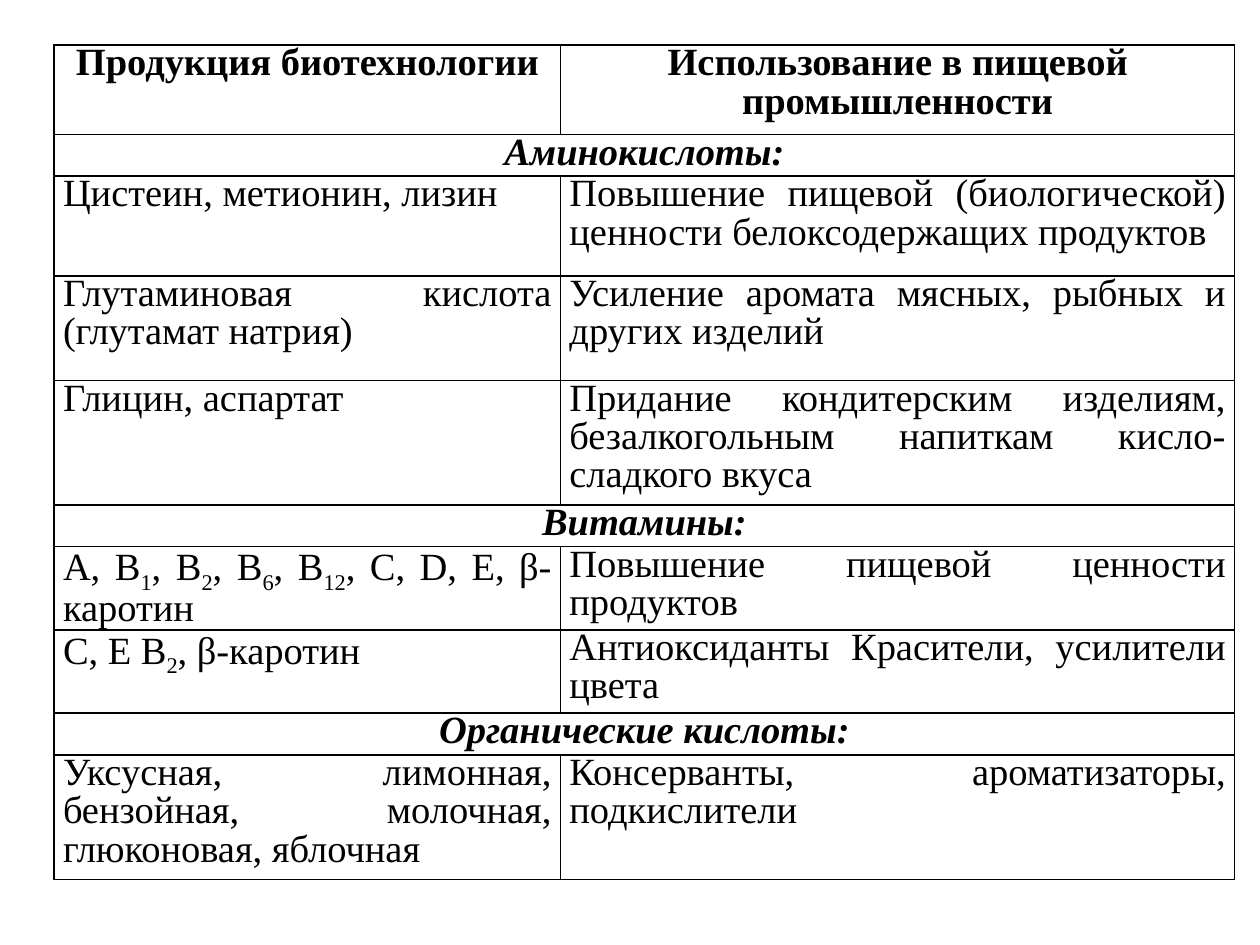
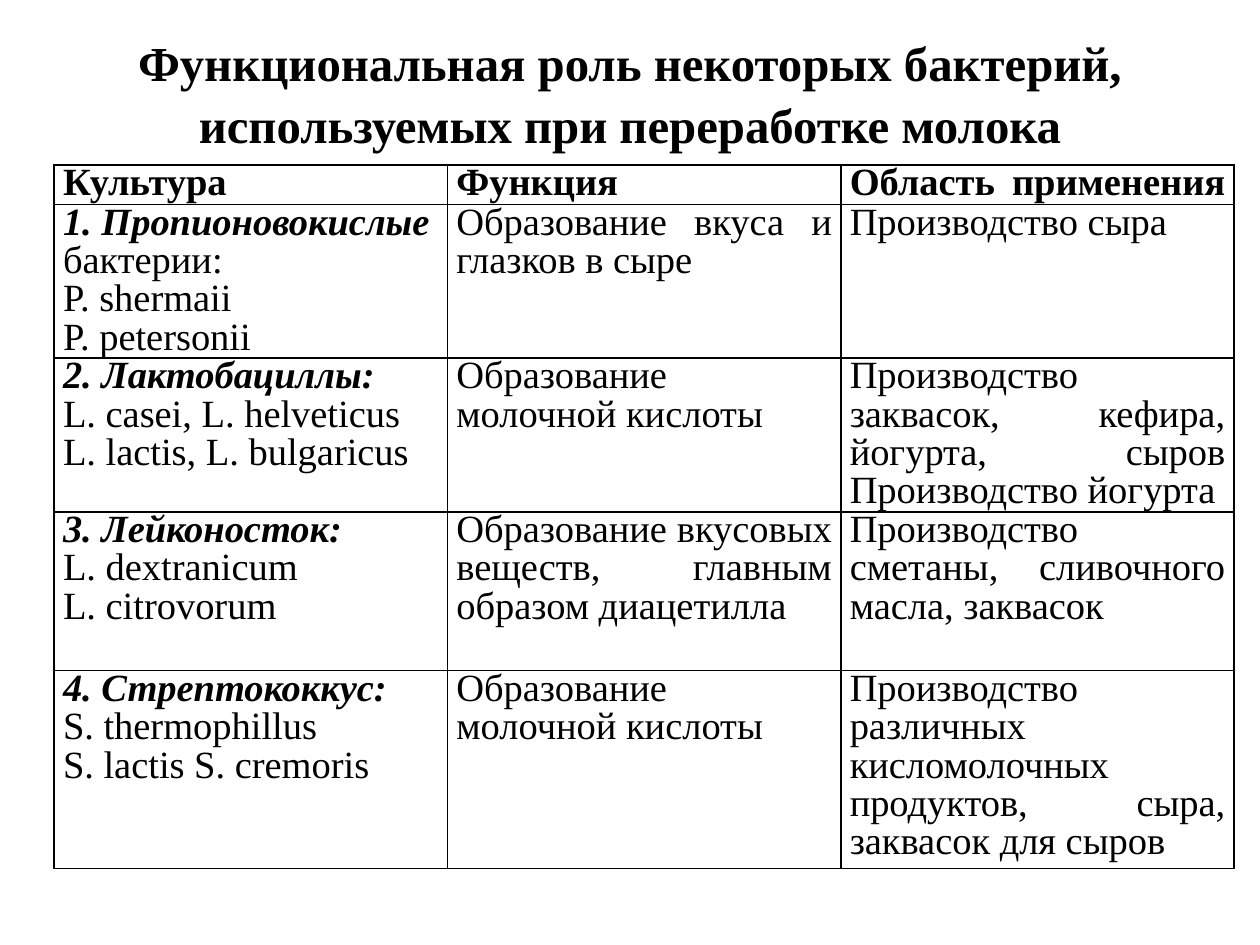
from lxml import etree
from pptx import Presentation
from pptx.dml.color import RGBColor
from pptx.enum.text import MSO_ANCHOR, MSO_AUTO_SIZE, PP_ALIGN as Align
from pptx.oxml.ns import qn
from pptx.util import Cm, Pt

# Shared look
COLORS = {"text": "000000", "border": "000000"}
FONT = "Times New Roman"
TITLE_SIZE, CELL_SIZE = 27.9, 22
TABLE_LEFT = 1.09
CELL_MARGIN = 0.18
TITLE_ONLY, BLANK = 5, 6

# Cell markup: *bold italic*, _subscript_, new line for a new paragraph
PRODUCTS = [
    ("Продукция биотехнологии", "Использование в пищевой промышленности"),
    ("*Аминокислоты:*",),
    ("Цистеин, метионин, лизин",
     "Повышение пищевой (биологической) ценности белоксодержащих продуктов"),
    ("Глутаминовая кислота (глутамат натрия)",
     "Усиление аромата мясных, рыбных и других изделий"),
    ("Глицин, аспартат",
     "Придание кондитерским изделиям, безалкогольным напиткам кисло-сладкого вкуса"),
    ("*Витамины:*",),
    ("А, В_1_, В_2_, В_6_, В_12_, С, D, Е, β-каротин",
     "Повышение пищевой ценности продуктов"),
    ("С, Е В_2_, β-каротин ", "Антиоксиданты Красители, усилители цвета"),
    ("*Органические кислоты:*",),
    ("Уксусная, лимонная, бензойная, молочная, глюконовая, яблочная ",
     "Консерванты, ароматизаторы, подкислители"),
]
PRODUCT_HEIGHTS = [1.8, 0.84, 2.01, 2.11, 2.51, 0.84, 1.68, 1.68, 0.84, 2.51]

BACTERIA = [
    ("Культура", "Функция ", "Область применения "),
    ("*1. Пропионовокислые* бактерии:\nP. shermaii\nP. petersonii",
     "Образование вкуса и глазков в сыре",
     "Производство сыра"),
    ("*2. Лактобациллы:*\nL. casei, L. helveticus\nL. lactis, L. bulgaricus",
     "Образование молочной кислоты",
     "Производство заквасок, кефира, йогурта, сыров Производство йогурта"),
    ("*3. Лейконосток:*\nL. dextranicum\nL. citrovorum",
     "Образование вкусовых веществ, главным образом диацетилла",
     "Производство сметаны, сливочного масла, заквасок"),
    ("*4. Стрептококкус:*\nS. thermophillus\nS. lactis S. cremoris",
     "Образование молочной кислоты",
     "Производство различных кисломолочных продуктов, сыра, заквасок для сыров"),
]
BACTERIA_HEIGHTS = [0.79, 3.1, 3.1, 3.2, 3.99]


def add_run(paragraph, text, size, bold=False, italic=False, subscript=False):
    run = paragraph.add_run()
    run.text = text
    font = run.font
    font.name, font.size, font.bold, font.italic = FONT, Pt(size), bold, italic
    font.color.rgb = RGBColor.from_string(COLORS["text"])
    if subscript:
        run._r.get_or_add_rPr().set("baseline", "-25000")


def add_marked_runs(paragraph, text, bold):
    for i, phrase in enumerate(text.split("*")):
        accent = i % 2 == 1
        for j, piece in enumerate(phrase.split("_")):
            if piece:
                add_run(paragraph, piece, CELL_SIZE, bold or accent, accent, j % 2 == 1)


def fill_cell(cell, text, alignment, bold):
    cell.margin_left = cell.margin_right = Cm(CELL_MARGIN)
    cell.margin_top = cell.margin_bottom = 0
    frame = cell.text_frame
    for i, line in enumerate(text.split("\n")):
        paragraph = frame.add_paragraph() if i else frame.paragraphs[0]
        paragraph.alignment = alignment
        paragraph.line_spacing = 0.9
        add_marked_runs(paragraph, line, bold)


def draw_borders(cell):
    cell.fill.background()
    properties = cell._tc.get_or_add_tcPr()
    for i, side in enumerate(("a:lnL", "a:lnR", "a:lnT", "a:lnB")):
        border = etree.Element(qn(side), w=str(Pt(1)))
        solid = etree.SubElement(border, qn("a:solidFill"))
        etree.SubElement(solid, qn("a:srgbClr"), val=COLORS["border"])
        properties.insert(i, border)


def add_grid(slide, top, widths, heights, rows, alignments, header_alignments):
    table = slide.shapes.add_table(
        len(rows), len(widths), Cm(TABLE_LEFT), Cm(top),
        Cm(sum(widths)), Cm(sum(heights))).table
    table.first_row = table.horz_banding = False
    for column, width in zip(table.columns, widths):
        column.width = Cm(width)
    for r, (texts, height) in enumerate(zip(rows, heights)):
        table.rows[r].height = Cm(height)
        is_section = len(texts) == 1
        if is_section:
            table.cell(r, 0).merge(table.cell(r, len(widths) - 1))
        row_alignments = header_alignments if r == 0 else alignments
        for c, text in enumerate(texts):
            alignment = Align.CENTER if is_section else row_alignments[c]
            fill_cell(table.cell(r, c), text, alignment, bold=r == 0)
        for c in range(len(widths)):
            draw_borders(table.cell(r, c))


def set_title(slide, text):
    title = slide.shapes.title
    title.left, title.top, title.width, title.height = (
        Cm(1.27), Cm(0.76), Cm(22.86), Cm(2.16))
    frame = title.text_frame
    frame.auto_size = MSO_AUTO_SIZE.NONE
    frame.vertical_anchor = MSO_ANCHOR.MIDDLE
    paragraph = frame.paragraphs[0]
    paragraph.alignment = Align.CENTER
    paragraph.line_spacing = 1.05
    add_run(paragraph, text, TITLE_SIZE, bold=True)


def main():
    deck = Presentation()
    deck.slide_width, deck.slide_height = Cm(25.4), Cm(19.05)

    # Biotechnology products and their use in food
    products = deck.slides.add_slide(deck.slide_layouts[BLANK])
    add_grid(products, 0.91, [10.21, 13.59], PRODUCT_HEIGHTS, PRODUCTS,
             [Align.JUSTIFY] * 2, [Align.CENTER] * 2)

    # Bacteria used in milk processing
    bacteria = deck.slides.add_slide(deck.slide_layouts[TITLE_ONLY])
    set_title(bacteria, "Функциональная роль некоторых бактерий, "
                        "используемых при переработке молока")
    culture_alignments = [Align.LEFT, Align.JUSTIFY, Align.JUSTIFY]
    add_grid(bacteria, 3.33, [7.93] * 3, BACTERIA_HEIGHTS, BACTERIA,
             culture_alignments, culture_alignments)

    deck.save("out.pptx")


if __name__ == "__main__":
    main()
